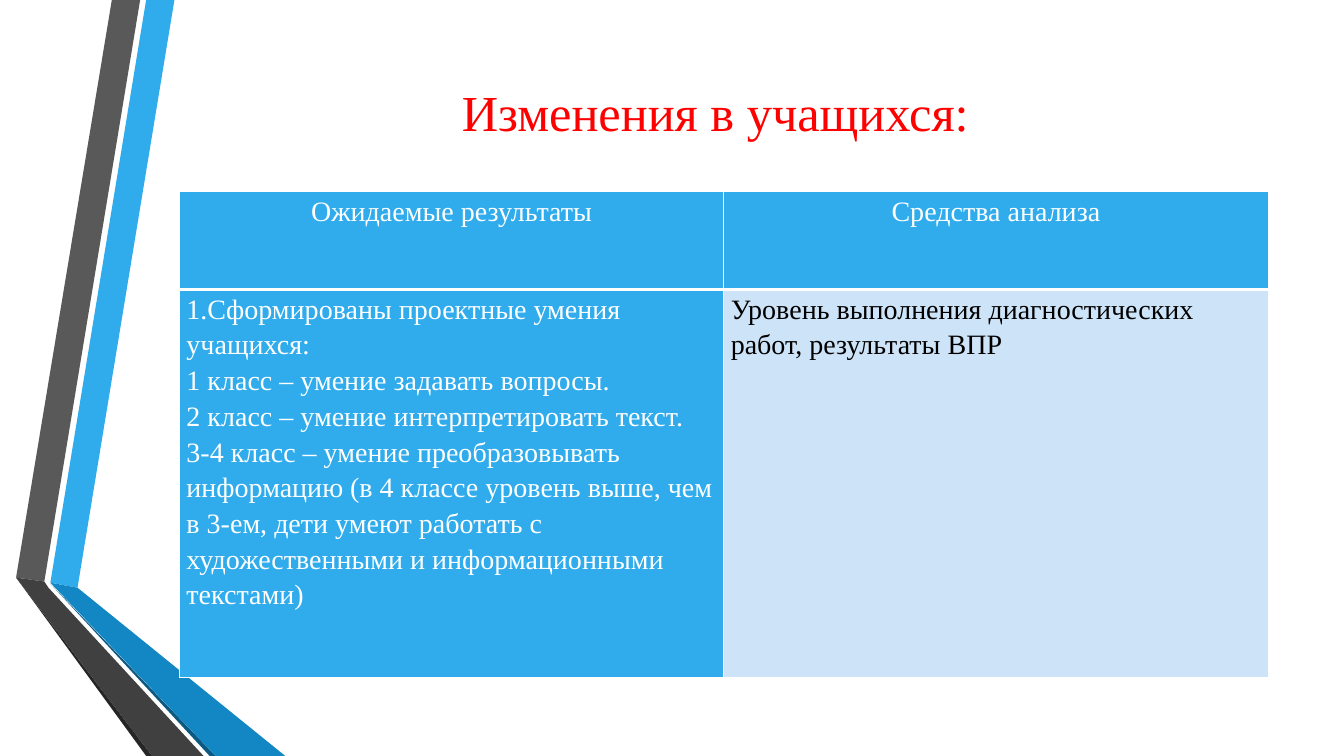
from dataclasses import dataclass

from lxml.etree import SubElement as Sub
from pptx import Presentation
from pptx.dml.color import RGBColor as RGB
from pptx.enum.text import MSO_ANCHOR as Anchor, PP_ALIGN as Align
from pptx.oxml.ns import qn
from pptx.util import Pt


@dataclass(frozen=True)
class Theme:
    font: str = "Times New Roman"
    title: int = 36
    body: int = 20
    red: str = "FF0000"
    white: str = "FFFFFF"
    black: str = "000000"
    blue: str = "30ACEC"
    pale: str = "CDE3F8"
    azure: str = "1287C3"
    navy: str = "0C5A82"
    gray: str = "595959"
    dark: str = "404040"
    coal: str = "262626"


THEME = Theme()
WIDE, HIGH = 960, 540

RIBBONS = [
    (THEME.blue, [(36, 416.2), (55.4, 419.8), (124.6, 0), (104.4, 0)]),
    (THEME.gray, [(100.1, 0), (79.9, 0), (11.5, 412.6), (31.7, 415.4)]),
    (THEME.coal, [(11.5, 412.6), (104.4, HIGH), (108.7, HIGH)]),
    (THEME.navy, [(36, 416.9), (149.8, HIGH), (154.1, HIGH)]),
    (THEME.azure, [(36, 416.2), (154.1, HIGH), (203.8, HIGH), (55.4, 419.8)]),
    (THEME.dark, [(145.4, HIGH), (34.6, 419.8), (31.7, 415.4),
                  (11.5, 412.6), (108.7, HIGH)]),
]
HEADS = ["Ожидаемые результаты", "Средства анализа"]
GOALS = [
    "1.Сформированы проектные умения учащихся:",
    "1 класс – умение задавать вопросы.",
    "2 класс – умение интерпретировать текст.",
    "3-4 класс – умение преобразовывать информацию (в 4 классе уровень выше, "
    "чем в 3-ем, дети умеют работать с художественными и информационными "
    "текстами)",
]
MEANS = ["Уровень выполнения диагностических работ, результаты ВПР"]


def write(frame, lines, size, color, align, lead=1.0):
    """Fill a text frame with one paragraph for each line."""
    frame.word_wrap = True
    for i, line in enumerate(lines):
        para = frame.paragraphs[0] if i == 0 else frame.add_paragraph()
        para.alignment, para.line_spacing = align, lead
        run = para.add_run()
        run.text = line
        run.font.name, run.font.size = THEME.font, Pt(size)
        run.font.color.rgb = RGB.from_string(color)


def draw_ribbons(slide, left, top):
    for color, points in RIBBONS:
        spots = [(Pt(left + x), Pt(top + y)) for x, y in points]
        pen = slide.shapes.build_freeform(*spots[0], scale=1.0)
        pen.add_line_segments(spots[1:], close=True)
        shape = pen.convert_to_shape()
        shape.shadow.inherit = False
        shape.fill.solid()
        shape.fill.fore_color.rgb = RGB.from_string(color)
        shape.line.fill.background()


def draw_title(slide, left, top, width, height):
    box = slide.shapes.add_textbox(Pt(left), Pt(top), Pt(width), Pt(height))
    box.text_frame.vertical_anchor = Anchor.MIDDLE
    write(box.text_frame, ["Изменения в учащихся:"],
          THEME.title, THEME.red, Align.CENTER)


def edge(cell, sides):
    """Give a cell white borders; sides maps each tag to its width."""
    props = cell._tc.get_or_add_tcPr()
    for tag, width in sides.items():
        line = Sub(props, qn(f"a:{tag}"), w=str(Pt(width)))
        fill = Sub(line, qn("a:solidFill"))
        Sub(fill, qn("a:srgbClr"), val=THEME.white)


def fill_cell(cell, lines, ink, back, align, sides):
    edge(cell, sides)
    cell.fill.solid()
    cell.fill.fore_color.rgb = RGB.from_string(back)
    cell.margin_left = cell.margin_right = Pt(5)
    cell.margin_top = cell.margin_bottom = 0
    write(cell.text_frame, lines, THEME.body, ink, align, 1.15)


def draw_table(slide, left, top, width, height):
    grid = slide.shapes.add_table(
        2, 2, Pt(left), Pt(top), Pt(width), Pt(height)).table
    head = 70
    grid.rows[0].height, grid.rows[1].height = Pt(head), Pt(height - head)
    for col, name in enumerate(HEADS):
        grid.columns[col].width = Pt(width / 2)
        fill_cell(grid.cell(0, col), [name], THEME.white, THEME.blue,
                  Align.CENTER, dict(lnL=1, lnR=1, lnT=1, lnB=3))
    looks = [(GOALS, THEME.white, THEME.blue), (MEANS, THEME.black, THEME.pale)]
    for col, (lines, ink, back) in enumerate(looks):
        fill_cell(grid.cell(1, col), lines, ink, back,
                  Align.LEFT, dict(lnL=1, lnR=1, lnT=3, lnB=1))


def main():
    deck = Presentation()
    deck.slide_width, deck.slide_height = Pt(WIDE), Pt(HIGH)
    slide = deck.slides.add_slide(deck.slide_layouts[6])
    draw_ribbons(slide, 0, 0)
    draw_title(slide, 116.6, 54, 789, 50.4)
    draw_table(slide, 128.2, 136.8, 777.6, 347)
    deck.save("out.pptx")


if __name__ == "__main__":
    main()
